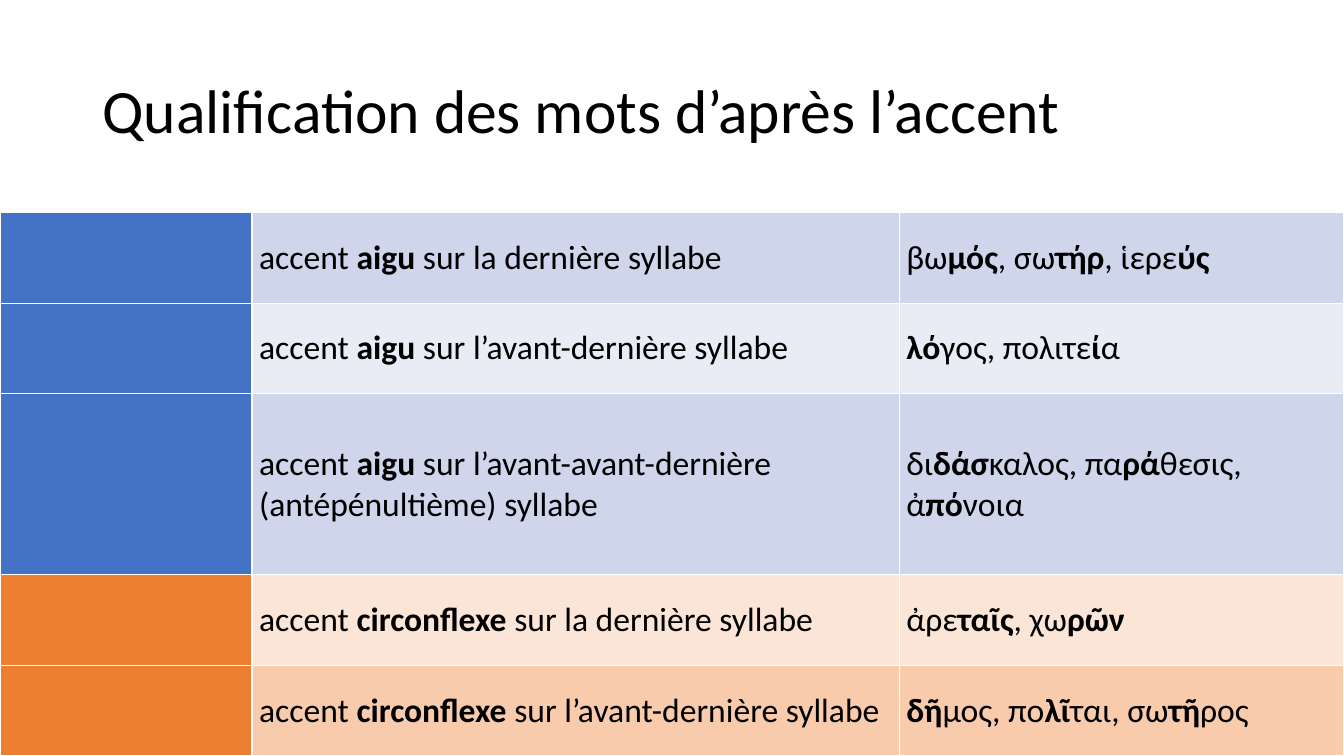
from dataclasses import dataclass

from lxml.etree import SubElement
from pptx import Presentation
from pptx.dml.color import RGBColor
from pptx.enum.text import MSO_ANCHOR, MSO_AUTO_SIZE, PP_ALIGN
from pptx.oxml.ns import qn
from pptx.util import Cm, Pt

# Content: text between asterisks is bold
TITLE = "Qualification des mots d’après l’accent"
ACCENTS = [  # kind, shade, height in row units, rule, examples
    ("aigu", "dark", 1, "accent *aigu* sur la dernière syllabe",
     "βω*μός*, σω*τήρ*, ἱερε*ύς*"),
    ("aigu", "light", 1, "accent *aigu* sur l’avant-dernière syllabe",
     "*λό*γος, πολιτε*ί*α"),
    ("aigu", "dark", 2,
     "accent *aigu* sur l’avant-avant-dernière (antépénultième) syllabe",
     "δι*δάσ*καλος, πα*ρά*θεσις, ἀ*πό*νοια"),
    ("circonflexe", "light", 1, "accent *circonflexe* sur la dernière syllabe",
     "ἀρε*ταῖς*, χω*ρῶν*"),
    ("circonflexe", "dark", 1, "accent *circonflexe* sur l’avant-dernière syllabe",
     "*δῆ*μος, πο*λῖ*ται, σω*τῆ*ρος"),
]


@dataclass(frozen=True)
class Theme:
    font: str = "Calibri"
    title_size: int = 44
    cell_size: int = 24
    text: str = "000000"
    border: str = "FFFFFF"
    border_width: int = 1


THEME = Theme()
FILLS = {
    "aigu": {"head": "4472C4", "dark": "CFD5EA", "light": "E9EBF5"},
    "circonflexe": {"head": "ED7D31", "dark": "F8CBAD", "light": "FBE5D6"},
}

# Layout in centimetres
SLIDE_W, SLIDE_H = 33.87, 19.05
TABLE_TOP = 5.36
COL_WIDTHS = [6.35, 16.31, 11.21]
ROW_UNIT = (SLIDE_H - TABLE_TOP) / sum(row[2] for row in ACCENTS)
CELL_INSET = 0.18


def style_run(r, size, bold=False):
    r.font.name = THEME.font
    r.font.size = Pt(size)
    r.font.bold = bold
    r.font.color.rgb = RGBColor.from_string(THEME.text)


def write_marked(p, marked):
    for i, part in enumerate(marked.split("*")):
        if part:
            r = p.add_run()
            r.text = part
            style_run(r, THEME.cell_size, bold=i % 2 == 1)


def format_cell(cell, fill):
    cell.vertical_anchor = MSO_ANCHOR.MIDDLE
    cell.margin_left = cell.margin_right = Cm(CELL_INSET)
    cell.margin_top = cell.margin_bottom = 0
    # Borders come before the fill in the cell properties
    tc_pr = cell._tc.get_or_add_tcPr()
    for side in "LRTB":
        ln = SubElement(tc_pr, qn(f"a:ln{side}"), w=str(Pt(THEME.border_width)))
        SubElement(SubElement(ln, qn("a:solidFill")), qn("a:srgbClr"), val=THEME.border)
    cell.fill.solid()
    cell.fill.fore_color.rgb = RGBColor.from_string(fill)


def add_title(s):
    sp = s.shapes.title
    sp.left, sp.top, sp.width, sp.height = Cm(2.33), Cm(1.01), Cm(29.21), Cm(3.68)
    tf = sp.text_frame
    tf.text = TITLE
    tf.auto_size = MSO_AUTO_SIZE.NONE
    tf.vertical_anchor = MSO_ANCHOR.MIDDLE
    p = tf.paragraphs[0]
    p.alignment = PP_ALIGN.LEFT
    p.line_spacing = 0.9
    style_run(p.runs[0], THEME.title_size)


def add_accent_table(s):
    table = s.shapes.add_table(len(ACCENTS), len(COL_WIDTHS), 0, Cm(TABLE_TOP),
                               Cm(SLIDE_W), Cm(SLIDE_H - TABLE_TOP)).table
    table.first_row = table.horz_banding = False
    for col, width in zip(table.columns, COL_WIDTHS):
        col.width = Cm(width)
    for row, (kind, shade, units, rule, examples) in zip(table.rows, ACCENTS):
        row.height = Cm(units * ROW_UNIT)
        fills = FILLS[kind]
        for cell, tone, text in zip(row.cells, ("head", shade, shade),
                                    ("", rule, examples)):
            format_cell(cell, fills[tone])
            write_marked(cell.text_frame.paragraphs[0], text)


def main():
    prs = Presentation()
    prs.slide_width, prs.slide_height = Cm(SLIDE_W), Cm(SLIDE_H)
    s = prs.slides.add_slide(prs.slide_layouts[5])
    add_title(s)
    add_accent_table(s)
    prs.save("out.pptx")


if __name__ == "__main__":
    main()
